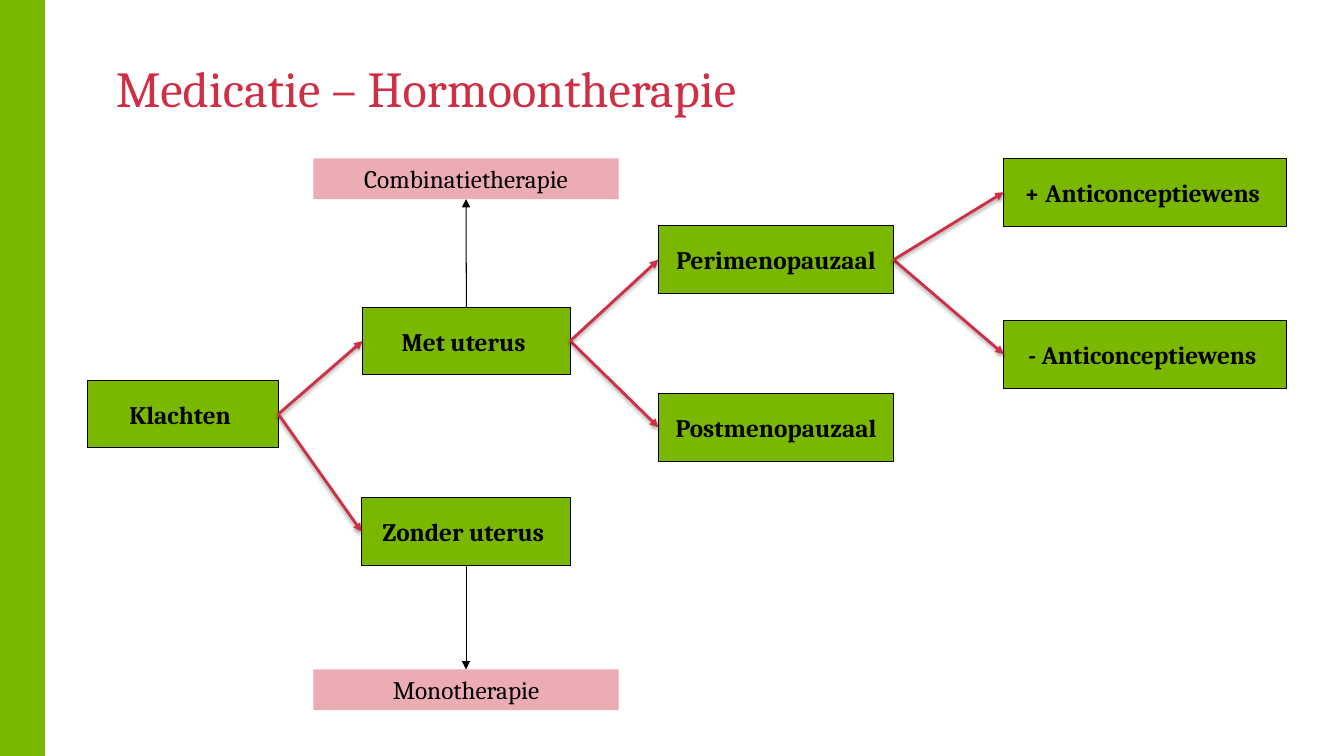
from lxml.etree import SubElement
from pptx import Presentation
from pptx.dml.color import RGBColor
from pptx.enum.shapes import MSO_CONNECTOR, MSO_SHAPE
from pptx.enum.text import MSO_ANCHOR, MSO_AUTO_SIZE, PP_ALIGN
from pptx.oxml.ns import qn
from pptx.util import Pt

COLORS = {"green": "7AB800", "red": "CF2F44", "pink": "ECACB4", "black": "000000"}
TOP, LEFT, BOTTOM, RIGHT = range(4)


class FlowSlide:
    """Draws the elements of a treatment flow chart on one slide."""

    font = "Cambria"
    box_height = 48.4

    def __init__(self, slide):
        self.slide = slide

    def color(self, name):
        return RGBColor.from_string(COLORS[name])

    def label(self, sp, text, size, color="black", bold=False, align=PP_ALIGN.CENTER):
        tf = sp.text_frame
        tf.text = text
        p = tf.paragraphs[0]
        p.alignment = align
        r = p.runs[0]
        r.font.name = self.font
        r.font.size = Pt(size)
        r.font.bold = bold
        r.font.color.rgb = self.color(color)
        return tf

    def title(self, text, x, y, w, h):
        sp = self.slide.shapes.add_textbox(Pt(x), Pt(y), Pt(w), Pt(h))
        tf = self.label(sp, text, 36, "red", align=PP_ALIGN.LEFT)
        tf.word_wrap = True
        tf.vertical_anchor = MSO_ANCHOR.BOTTOM
        tf.paragraphs[0].line_spacing = 0.9

    def rect(self, x, y, w, h, fill):
        sp = self.slide.shapes.add_shape(MSO_SHAPE.RECTANGLE, Pt(x), Pt(y), Pt(w), Pt(h))
        sp.shadow.inherit = False
        sp.fill.solid()
        sp.fill.fore_color.rgb = self.color(fill)
        sp.line.fill.background()
        return sp

    def step(self, text, x, y, w):
        sp = self.rect(x, y, w, self.box_height, "green")
        sp.line.color.rgb = self.color("black")
        sp.line.width = Pt(0.75)
        tf = self.label(sp, text, 18, bold=True)
        tf.word_wrap = False
        tf.vertical_anchor = MSO_ANCHOR.MIDDLE
        return sp

    def therapy(self, text, y):
        sp = self.rect(223.8, y, 218.2, 29.1, "pink")
        tf = self.label(sp, text, 18)
        tf.word_wrap = True
        tf.vertical_anchor = MSO_ANCHOR.TOP
        tf.auto_size = MSO_AUTO_SIZE.SHAPE_TO_FIT_TEXT
        return sp

    def arrow(self, start, start_side, end, end_side, color, width, shadow=False):
        cn = self.slide.shapes.add_connector(MSO_CONNECTOR.STRAIGHT, 0, 0, 0, 0)
        cn.begin_connect(start, start_side)
        cn.end_connect(end, end_side)
        cn.line.color.rgb = self.color(color)
        cn.line.width = Pt(width)
        props = cn._element.spPr
        SubElement(props.find(qn("a:ln")), qn("a:tailEnd"), type="triangle")
        effects = SubElement(props, qn("a:effectLst"))
        if shadow:
            outer = SubElement(effects, qn("a:outerShdw"), blurRad=str(Pt(3.1)),
                               dist=str(Pt(1.6)), dir="5400000", rotWithShape="0")
            black = SubElement(outer, qn("a:srgbClr"), val=COLORS["black"])
            SubElement(black, qn("a:alpha"), val="38000")

    def branch(self, start, *ends):
        for end in ends:
            self.arrow(start, RIGHT, end, LEFT, "red", 2, shadow=True)


def main():
    prs = Presentation()
    prs.slide_width, prs.slide_height = Pt(960), Pt(540)
    s = FlowSlide(prs.slides.add_slide(prs.slide_layouts[6]))

    s.rect(0, 0, 32, 540, "green")
    s.title("Medicatie – Hormoontherapie", 75.6, 12.2, 756.7, 75.6)

    complaints = s.step("Klachten ", 62.5, 271.6, 136.3)
    without_uterus = s.step("Zonder uterus ", 258.3, 355.6, 149.2)
    with_uterus = s.step("Met uterus ", 259, 219.4, 148.3)
    peri = s.step("Perimenopauzaal", 470.3, 161.4, 168)
    post = s.step("Postmenopauzaal", 470.3, 281, 168)
    wish = s.step("+ Anticonceptiewens ", 717, 113.1, 202)
    no_wish = s.step("- Anticonceptiewens ", 717, 228.8, 202)

    s.branch(complaints, with_uterus, without_uterus)
    s.branch(with_uterus, post, peri)
    s.branch(peri, no_wish, wish)

    combination = s.therapy("Combinatietherapie", 113.1)
    s.arrow(with_uterus, TOP, combination, BOTTOM, "black", 0.75)
    mono = s.therapy("Monotherapie", 478.2)
    s.arrow(without_uterus, BOTTOM, mono, TOP, "black", 0.75)

    prs.save("out.pptx")


if __name__ == "__main__":
    main()
